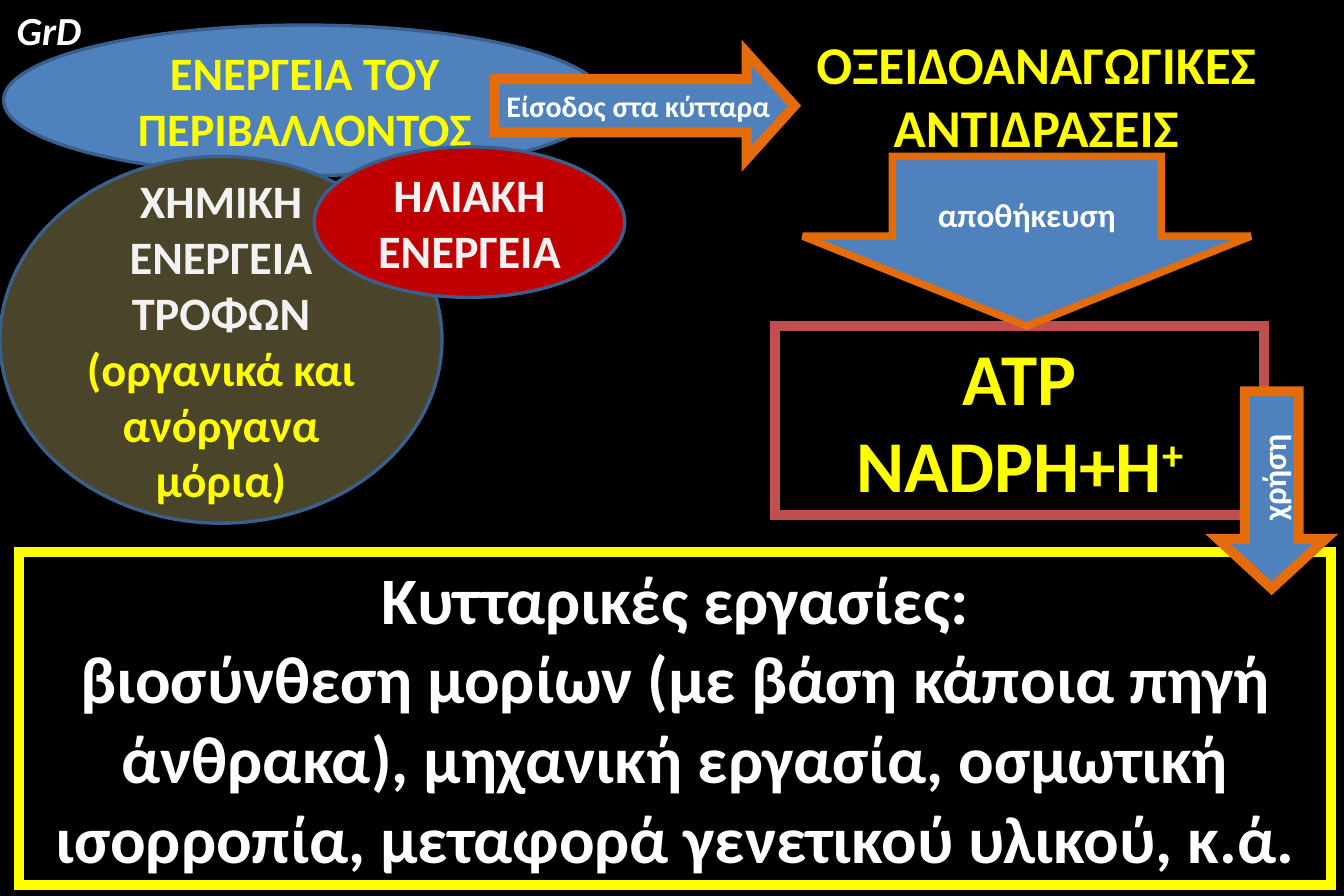
from dataclasses import dataclass

from lxml.etree import SubElement
from pptx import Presentation
from pptx.dml.color import RGBColor
from pptx.enum.shapes import MSO_SHAPE
from pptx.enum.text import MSO_ANCHOR, MSO_AUTO_SIZE, PP_ALIGN
from pptx.oxml.ns import qn
from pptx.slide import Slide
from pptx.util import Inches, Pt

COLORS = {
    "black": "000000",
    "white": "FFFFFF",
    "pale": "F2F2F2",
    "yellow": "FFFF00",
    "blue": "4F81BD",
    "dark blue": "3A5F8C",
    "orange": "E46C0A",
    "red": "C00000",
    "rose": "C0504D",
    "olive": "4A452A",
}


@dataclass(frozen=True)
class Span:
    text: str
    color: str | None = None
    superscript: bool = False


@dataclass(frozen=True)
class Block:
    """A shape with its text; without a kind it is a plain text box."""
    box: tuple[float, float, float, float]
    paragraphs: list[list[Span]]
    size: int
    color: str
    kind: MSO_SHAPE | None = None
    fill: str | None = None
    line: str | None = None
    line_width: float = 2
    adjustments: tuple[float, ...] = ()
    anchor: MSO_ANCHOR = MSO_ANCHOR.MIDDLE
    align: PP_ALIGN = PP_ALIGN.CENTER
    wrap: bool = True
    grow: bool = False
    italic: bool = False
    rotation: int = 0
    text_turn: int = 0


BLOCKS = [
    Block((0.03, 0.21, 5.04, 1.26), [[Span("ΕΝΕΡΓΕΙΑ ΤΟΥ ΠΕΡΙΒΑΛΛΟΝΤΟΣ")]], 28, "yellow",
          MSO_SHAPE.OVAL, "blue", "dark blue"),
    Block((6.49, 2.73, 4.09, 1.58),
          [[Span("ATP")], [Span("NADΡH+Η"), Span("+", superscript=True)]], 44, "yellow",
          MSO_SHAPE.RECTANGLE, None, "rose", 6, anchor=MSO_ANCHOR.TOP, grow=True),
    Block((4.14, 0.44, 2.51, 0.89), [[Span("Είσοδος στα κύτταρα")]], 18, "white",
          MSO_SHAPE.RIGHT_ARROW, "blue", "orange", 6, (0.5, 0.45),
          align=PP_ALIGN.LEFT, wrap=False),
    Block((0.16, 4.62, 10.98, 2.79),
          [[Span("Κυτταρικές εργασίες:")],
           [Span("βιοσύνθεση μορίων (με βάση κάποια πηγή άνθρακα), μηχανική εργασία, "
                 "οσμωτική ισορροπία, μεταφορά γενετικού υλικού, κ.ά.")]], 40, "white",
          MSO_SHAPE.RECTANGLE, None, "yellow", 6, anchor=MSO_ANCHOR.TOP, grow=True),
    Block((6.72, 1.31, 3.75, 1.42), [[Span("αποθήκευση")]], 20, "white",
          MSO_SHAPE.DOWN_ARROW, "blue", "orange", 4.5, (0.6, 0.53), wrap=False),
    Block((6.1, 0.21, 5.15, 1.17), [[Span("ΟΞΕΙΔΟΑΝΑΓΩΓΙΚΕΣ ΑΝΤΙΔΡΑΣΕΙΣ")]], 32, "yellow",
          anchor=MSO_ANCHOR.TOP, grow=True),
    Block((9.82, 3.65, 1.65, 0.9), [[Span("χρήση")]], 20, "white",
          MSO_SHAPE.RIGHT_ARROW, "blue", "orange", 6, (0.5, 0.46),
          anchor=MSO_ANCHOR.BOTTOM, wrap=False, rotation=90, text_turn=180),
    Block((0, 1.31, 3.7, 3.07),
          [[Span("ΧΗΜΙΚΗ ΕΝΕΡΓΕΙΑ ΤΡΟΦΩΝ "),
            Span("(οργανικά και ανόργανα μόρια)", "yellow")]], 28, "pale",
          MSO_SHAPE.OVAL, "olive", "dark blue"),
    Block((2.63, 1.23, 2.6, 1.26), [[Span("ΗΛΙΑΚΗ ΕΝΕΡΓΕΙΑ")]], 28, "pale",
          MSO_SHAPE.OVAL, "red", "dark blue"),
    Block((0, 0, 0.82, 0.5), [[Span("GrD")]], 24, "white",
          anchor=MSO_ANCHOR.TOP, grow=True, italic=True),
]


def rgb(name: str) -> RGBColor:
    return RGBColor.from_string(COLORS[name])


def style_outline(shape, block: Block) -> None:
    shape.shadow.inherit = False
    if block.fill:
        shape.fill.solid()
        shape.fill.fore_color.rgb = rgb(block.fill)
    else:
        shape.fill.background()
    shape.line.color.rgb = rgb(block.line)
    shape.line.width = Pt(block.line_width)
    outline = shape.line._get_or_add_ln()
    SubElement(outline, qn("a:miter"), lim="800000")
    for index, value in enumerate(block.adjustments):
        shape.adjustments[index] = value
    shape.rotation = block.rotation


def write_text(shape, block: Block) -> None:
    frame = shape.text_frame
    frame.word_wrap = block.wrap
    frame.vertical_anchor = block.anchor
    if block.grow:
        frame.auto_size = MSO_AUTO_SIZE.SHAPE_TO_FIT_TEXT
    if block.text_turn:
        frame._txBody.bodyPr.set("rot", str(block.text_turn * 60000))
    for index, spans in enumerate(block.paragraphs):
        paragraph = frame.add_paragraph() if index else frame.paragraphs[0]
        paragraph.alignment = block.align
        font = paragraph.font
        font.name, font.size = "Calibri", Pt(block.size)
        font.bold, font.italic = True, block.italic
        font.color.rgb = rgb(block.color)
        for span in spans:
            run = paragraph.add_run()
            run.text = span.text
            run.font.color.rgb = rgb(span.color or block.color)
            if span.superscript:
                run._r.get_or_add_rPr().set("baseline", "30000")


def add_block(slide: Slide, block: Block) -> None:
    box = [Inches(length) for length in block.box]
    if block.kind is None:
        shape = slide.shapes.add_textbox(*box)
    else:
        shape = slide.shapes.add_shape(block.kind, *box)
        style_outline(shape, block)
    write_text(shape, block)


def main() -> None:
    presentation = Presentation()
    presentation.slide_width = Inches(11.25)
    presentation.slide_height = Inches(7.5)
    slide = presentation.slides.add_slide(presentation.slide_layouts[6])
    slide.background.fill.solid()
    slide.background.fill.fore_color.rgb = rgb("black")
    for block in BLOCKS:
        add_block(slide, block)
    presentation.save("out.pptx")


if __name__ == "__main__":
    main()
